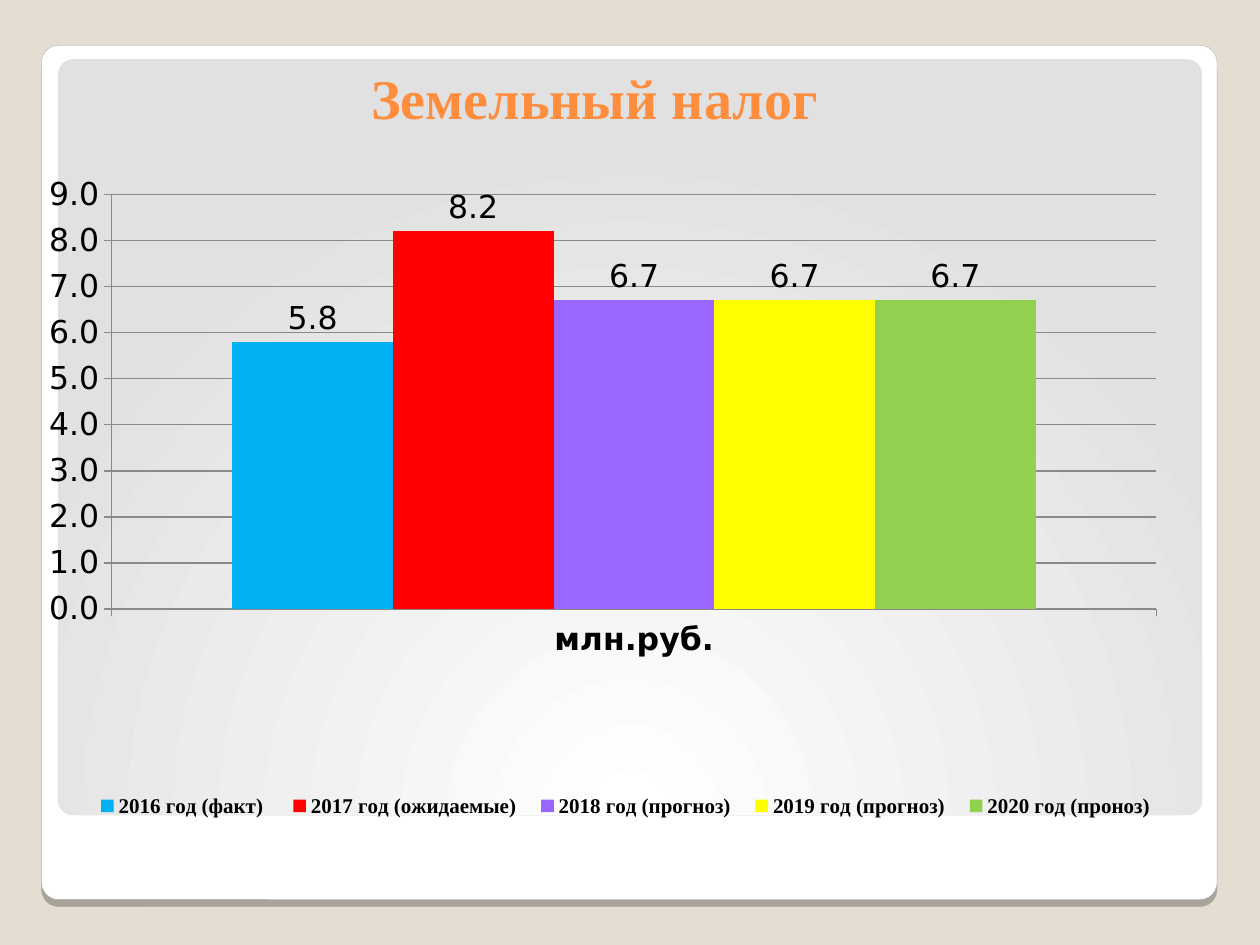
"""Build the land tax slide: a framed panel, a heading and a column chart."""
from lxml.etree import SubElement
from pptx import Presentation
from pptx.chart.data import CategoryChartData
from pptx.dml.color import RGBColor
from pptx.enum.chart import XL_CHART_TYPE as ChartType, XL_LABEL_POSITION as LabelPos
from pptx.enum.chart import XL_LEGEND_POSITION as LegendPos, XL_TICK_MARK as Tick
from pptx.enum.shapes import MSO_SHAPE as Shape
from pptx.enum.text import MSO_ANCHOR as Anchor, PP_ALIGN as Align
from pptx.oxml import parse_xml
from pptx.oxml.ns import nsdecls, qn
from pptx.util import Inches, Pt

COLORS = {"backdrop": "E3DED1", "card": "FFFFFF", "edge": "A4A3A3", "title": "FF8D3E",
          "glow": "FFFFFF", "shade": "E1E1E1", "text": "000000", "axis": "898989"}
SERIF, SANS = "Times New Roman", "DejaVu Sans"
YEARS = [("2016 год (факт) ", 5.8, "00B0F0"), ("2017 год (ожидаемые)", 8.2, "FF0000"),
         ("2018 год (прогноз)", 6.7, "9966FF"), ("2019 год (прогноз)", 6.7, "FFFF00"),
         ("2020 год (проноз)", 6.7, "92D050")]


def style(font, face, size, color="text", bold=False):
    font.name, font.size, font.bold = face, Pt(size), bold
    font.color.rgb = RGBColor.from_string(COLORS[color])


def place(parent, index, **shares):
    for old in parent.findall(qn("c:layout")):
        parent.remove(old)
    layout = parse_xml(f"<c:layout {nsdecls('c')}><c:manualLayout/></c:layout>")
    settings = {"xMode": "edge", "yMode": "edge", **shares}
    for tag, value in settings.items():
        SubElement(layout[0], qn(f"c:{tag}")).set("val", str(value))
    parent.insert(index, layout)


prs = Presentation()
prs.slide_width, prs.slide_height = Inches(10), Inches(7.5)
slide = prs.slides.add_slide(prs.slide_layouts[6])
slide.background.fill.solid()
slide.background.fill.fore_color.rgb = RGBColor.from_string(COLORS["backdrop"])

panels = []
for box in [(0.33, 0.36, 9.33, 6.78), (0.46, 0.47, 9.08, 6)]:
    panel = slide.shapes.add_shape(Shape.ROUNDED_RECTANGLE, *map(Inches, box))
    panel.adjustments[0] = 0.02
    panel.shadow.inherit = False
    panels.append(panel)
card, glow = panels

card.fill.solid()
card.fill.fore_color.rgb = RGBColor.from_string(COLORS["card"])
card.line.color.rgb = RGBColor.from_string(COLORS["edge"])
card.line.width = Pt(0.16)
card_shadow = parse_xml(
    f'<a:outerShdw {nsdecls("a")} blurRad="0" dist="{Pt(4)}" dir="5400000" algn="tl" '
    f'rotWithShape="0"><a:srgbClr val="{COLORS["text"]}"><a:alpha val="25000"/></a:srgbClr>'
    '</a:outerShdw>')
card.element.spPr.find(qn("a:effectLst")).append(card_shadow)

glow.line.fill.background()
radial = parse_xml(
    f'<a:gradFill {nsdecls("a")} rotWithShape="1"><a:gsLst>'
    f'<a:gs pos="0"><a:srgbClr val="{COLORS["glow"]}"/></a:gs>'
    f'<a:gs pos="100000"><a:srgbClr val="{COLORS["shade"]}"/></a:gs></a:gsLst>'
    '<a:path path="circle"><a:fillToRect l="50000" t="175000" r="50000" b="-75000"/></a:path>'
    '</a:gradFill>')
glow.element.spPr.find(qn("a:prstGeom")).addnext(radial)

heading = slide.shapes.add_textbox(*map(Inches, (0.23, 0.47, 8.98, 0.62))).text_frame
heading.word_wrap = True
heading.vertical_anchor = Anchor.BOTTOM
heading.text = "Земельный налог"
heading.paragraphs[0].alignment = Align.CENTER
style(heading.paragraphs[0].runs[0].font, SERIF, 32, "title", True)

tax = CategoryChartData(number_format="0.0")
tax.categories = ["млн.руб."]
for year, amount, _ in YEARS:
    tax.add_series(year, [amount])
chart = slide.shapes.add_chart(
    ChartType.COLUMN_CLUSTERED, *map(Inches, (0.39, 1.09, 9.06, 6.17)), tax).chart
chart.has_title = False
style(chart.font, SANS, 18)

columns = chart.plots[0]
columns.gap_width, columns.overlap = 150, 0
columns.vary_by_categories = False
for series, (_, _, color) in zip(columns.series, YEARS):
    series.format.fill.solid()
    series.format.fill.fore_color.rgb = RGBColor.from_string(color)
    labels = series.data_labels
    labels.show_value = True
    labels.number_format, labels.number_format_is_linked = "0.0", False
    labels.position = LabelPos.OUTSIDE_END
    style(labels.font, SANS, 18)

amounts, unit = chart.value_axis, chart.category_axis
amounts.minimum_scale, amounts.maximum_scale, amounts.major_unit = 0, 9, 1
amounts.tick_labels.number_format = "0.0"
amounts.tick_labels.number_format_is_linked = False
for axis in (amounts, unit):
    axis.major_tick_mark = Tick.OUTSIDE
    style(axis.tick_labels.font, SANS, 18, bold=axis is unit)
for ruled in (amounts, unit, amounts.major_gridlines):
    ruled.format.line.color.rgb = RGBColor.from_string(COLORS["axis"])
    ruled.format.line.width = Pt(0.75)

chart.has_legend = True
legend = chart.legend
legend.position = LegendPos.RIGHT
legend.include_in_layout = False
style(legend.font, SERIF, 12, bold=True)
place(legend._element, 1, x=0.03, y=0.82, w=0.95, h=0.08)
plot_area = columns._element.getparent()
place(plot_area, 0, layoutTarget="outer", x=0, y=0.05, w=0.97, h=0.62)
target = plot_area[0][0].find(qn("c:layoutTarget"))
plot_area[0][0].insert(0, target)

prs.save("out.pptx")
